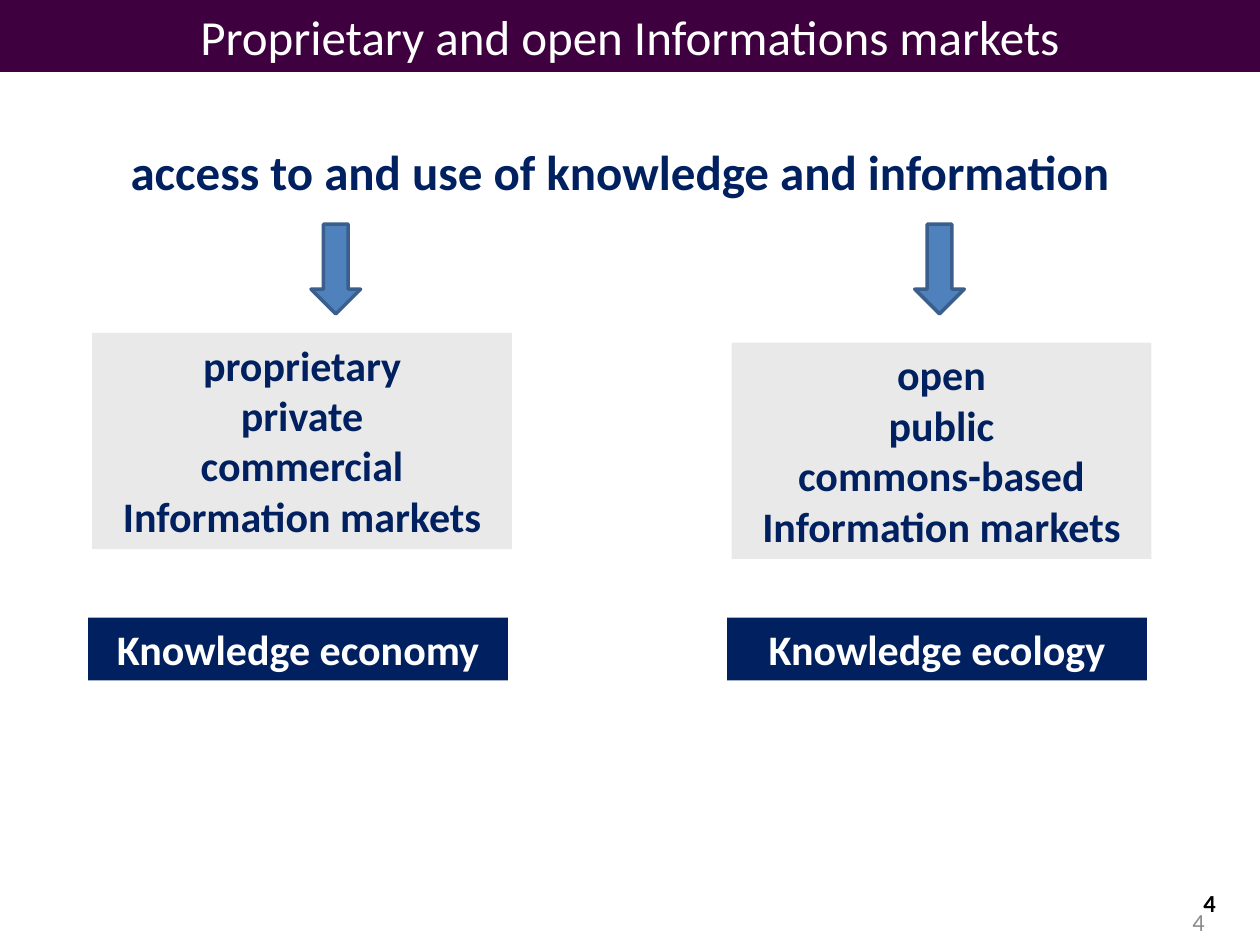
"""Build the slide on proprietary and open information markets."""
from pptx import Presentation
from pptx import util as u
from pptx.dml.color import RGBColor
from pptx.enum import shapes, text

HUES = {"plum": "3E003E", "navy": "002060", "pale": "E9E9E9", "blue": "4F81BD",
        "edge": "3A5F8C", "white": "FFFFFF", "gray": "8C8C8C", "black": "000000"}
MID, RIGHT = text.PP_ALIGN.CENTER, text.PP_ALIGN.RIGHT
TOP, HALF = text.MSO_ANCHOR.TOP, text.MSO_ANCHOR.MIDDLE

deck = Presentation()
deck.slide_width, deck.slide_height = u.Cm(25.4), u.Cm(19.05)
page = deck.slides.add_slide(deck.slide_layouts[6])


def block(kind, area, fill, edge=None):
    item = page.shapes.add_shape(kind, *[u.Cm(n) for n in area])
    item.shadow.inherit = False
    item.fill.solid()
    item.fill.fore_color.rgb = RGBColor.from_string(HUES[fill])
    if edge:
        item.line.color.rgb = RGBColor.from_string(HUES[edge])
        item.line.width = u.Pt(2)
    else:
        item.line.fill.background()
    return item


def write(item, lines, size, hue, bold=True, align=MID, anchor=TOP, space=None):
    frame = item.text_frame
    frame.word_wrap = True
    frame.vertical_anchor = anchor
    for i, line in enumerate(lines):
        para = frame.add_paragraph() if i else frame.paragraphs[0]
        para.alignment = align
        if space:
            para.line_spacing = space
        run = para.add_run()
        run.text = line
        run.font.name = "Calibri"
        run.font.size = u.Pt(size)
        run.font.bold = bold
        run.font.color.rgb = RGBColor.from_string(HUES[hue])
    return frame


rect, arrow = shapes.MSO_SHAPE.RECTANGLE, shapes.MSO_SHAPE.DOWN_ARROW

foot = page.shapes.add_textbox(u.Cm(18.62), u.Cm(18.08), u.Cm(5.92), u.Cm(1.02))
write(foot, ["4"], 14, "gray", False, RIGHT, HALF)

title = block(rect, (0, 0, 25.4, 1.45), "plum")
write(title, ["Proprietary and open Informations markets"], 28, "white", False)

lead = page.shapes.add_textbox(u.Cm(1.7), u.Cm(2.13), u.Cm(21.59), u.Cm(2.06))
write(lead, ["access to and use of knowledge and information"], 28, "navy", space=1.5)

sides = [
    (1.86, 6.71, 6.27, 1.78, ["proprietary", "private", "commercial"], "Knowledge economy"),
    (14.75, 6.91, 18.44, 14.66, ["open", "public", "commons-based"], "Knowledge ecology"),
]
for left, top, tip, base, traits, name in sides:
    card = block(rect, (left, top, 8.46, 4.36), "pale")
    write(card, traits + ["Information markets"], 24, "navy")
    block(arrow, (tip, 4.52, 1, 1.81), "blue", "edge")
    label = block(rect, (base, 12.45, 8.46, 1.27), "navy")
    write(label, [name], 24, "white")

count = page.shapes.add_textbox(u.Cm(23.29), u.Cm(17.53), u.Cm(1.22), u.Cm(1.32))
frame = write(count, ["4"], 14, "black", True, RIGHT, HALF)
frame.margin_left = frame.margin_right = frame.margin_top = frame.margin_bottom = 0

deck.save("out.pptx")
